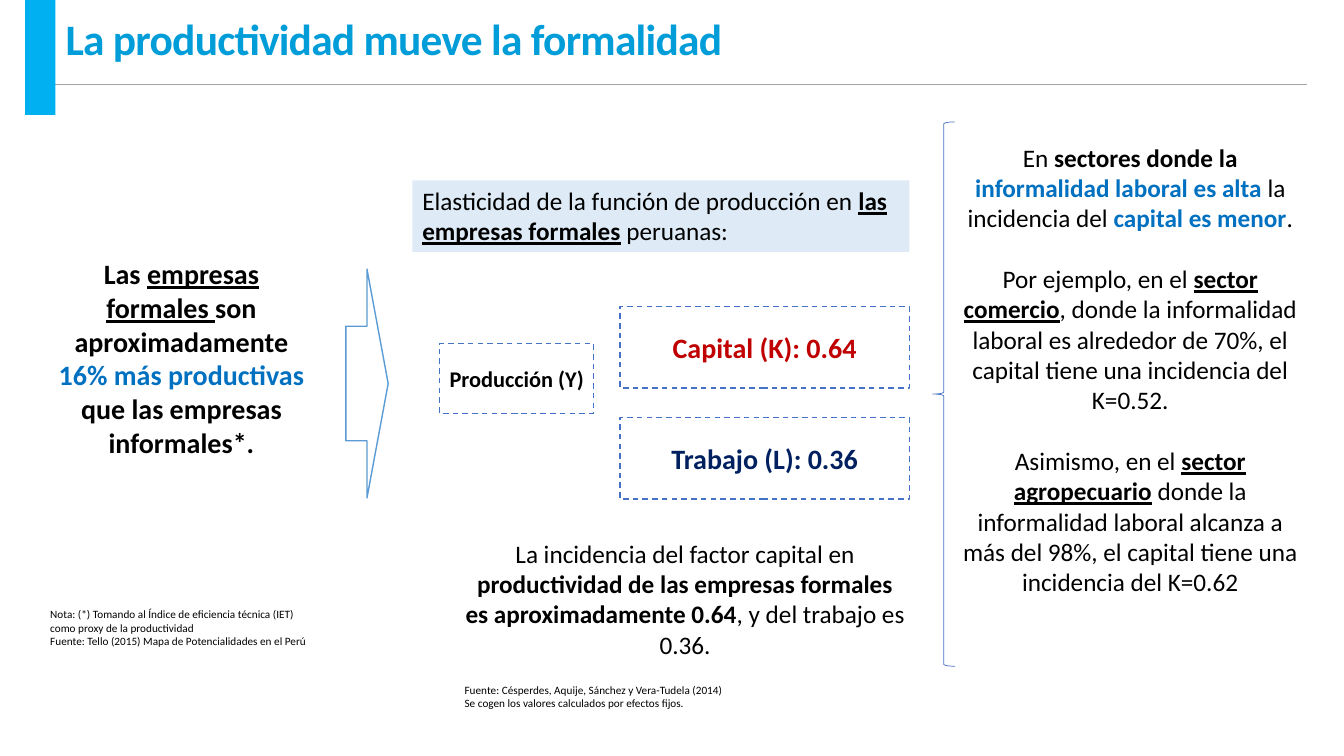
from dataclasses import dataclass

from lxml import etree
from pptx import Presentation
from pptx.dml.color import RGBColor
from pptx.enum.dml import MSO_LINE
from pptx.enum.shapes import MSO_CONNECTOR as Connector, MSO_SHAPE as Preset
from pptx.enum.text import MSO_ANCHOR as Anchor, MSO_AUTO_SIZE, PP_ALIGN as Align
from pptx.oxml.ns import qn
from pptx.util import Emu, Pt

EMU_PER_PX = 9144  # 100 px to the inch
FONT = "Calibri"
BLACK = RGBColor(0x00, 0x00, 0x00)
WHITE = RGBColor(0xFF, 0xFF, 0xFF)
TITLE_BLUE = RGBColor(0x00, 0x9D, 0xD9)
ACCENT_BLUE = RGBColor(0x00, 0xB0, 0xF0)
KEY_BLUE = RGBColor(0x00, 0x70, 0xC0)
NAVY = RGBColor(0x00, 0x20, 0x60)
RED = RGBColor(0xC0, 0x00, 0x00)
PALE_BLUE = RGBColor(0xDE, 0xEB, 0xF7)
BORDER_BLUE = RGBColor(0x44, 0x72, 0xC4)
ARROW_BLUE = RGBColor(0x5B, 0x9B, 0xD5)
RULE_GRAY = RGBColor(0xA5, 0xA5, 0xA5)


@dataclass(frozen=True)
class Box:
    left: int
    top: int
    width: int
    height: int

    def emu(self) -> tuple[Emu, ...]:
        return tuple(px(n) for n in (self.left, self.top, self.width, self.height))


@dataclass(frozen=True)
class Span:
    text: str
    bold: bool = False
    underline: bool = False
    color: RGBColor = BLACK


@dataclass(frozen=True)
class Passage:
    box: Box
    size: int
    paragraphs: tuple[tuple[Span, ...], ...]
    align: Align = Align.CENTER
    gap: int = 0  # points between paragraphs


@dataclass(frozen=True)
class Factor:
    """A dashed box that holds one term of the production function."""
    box: Box
    size: int
    label: str
    color: RGBColor


PASSAGES = (
    Passage(Box(40, 250, 280, 212), 20, ((
        Span("Las ", True),
        Span("empresas formales ", True, True),
        Span("son aproximadamente ", True),
        Span("16% más productivas ", True, color=KEY_BLUE),
        Span("que las empresas informales*.", True),
    ),)),
    Passage(Box(451, 529, 457, 131), 18, ((
        Span("La incidencia del factor capital en "),
        Span("productividad de las empresas formales es aproximadamente 0.64", True),
        Span(", y del trabajo es 0.36."),
    ),)),
    Passage(Box(945, 136, 352, 495), 18, (
        (
            Span("En "),
            Span("sectores donde la ", True),
            Span("informalidad laboral es alta ", True, color=KEY_BLUE),
            Span("la incidencia del "),
            Span("capital es menor", True, color=KEY_BLUE),
            Span("."),
        ),
        (
            Span("Por ejemplo, en el "),
            Span("sector comercio", True, True),
            Span(", donde la informalidad laboral es alrededor de 70%, "
                 "el capital tiene una incidencia del K=0.52."),
        ),
        (
            Span("Asimismo, en el "),
            Span("sector agropecuario", True, True),
            Span(" donde la informalidad laboral alcanza a más del 98%, "
                 "el capital tiene una incidencia del K=0.62"),
        ),
    ), gap=22),
    Passage(Box(40, 598, 280, 50), 8, (
        (Span("Nota: (*) Tomando al Índice de eficiencia técnica (IET) "
              "como proxy de la productividad"),),
        (Span("Fuente: Tello (2015) Mapa de Potencialidades en el Perú"),),
    ), Align.LEFT),
    Passage(Box(451, 673, 307, 37), 8, (
        (Span("Fuente: Césperdes, Aquije, Sánchez y Vera-Tudela (2014)"),),
        (Span("Se cogen los valores calculados por efectos fijos."),),
    ), Align.LEFT),
)

ELASTICITY = Passage(Box(409, 179, 493, 71), 18, ((
    Span("Elasticidad de la función de producción en "),
    Span("las empresas formales", True, True),
    Span(" peruanas:"),
),), Align.LEFT)

FACTORS = (
    Factor(Box(615, 304, 287, 81), 20, "Capital (K): 0.64", RED),
    Factor(Box(615, 414, 287, 81), 20, "Trabajo (L): 0.36", NAVY),
    Factor(Box(436, 341, 153, 69), 16, "Producción (Y)", BLACK),
)


def px(length: int) -> Emu:
    return Emu(length * EMU_PER_PX)


def add_span(paragraph, span: Span, size: int):
    run = paragraph.add_run()
    run.text = span.text
    font = run.font
    font.name, font.size = FONT, Pt(size)
    font.bold, font.underline = span.bold, span.underline
    font.color.rgb = span.color
    return run


def write(frame, passage: Passage) -> None:
    frame.word_wrap = True
    frame.vertical_anchor = Anchor.TOP
    for index, spans in enumerate(passage.paragraphs):
        paragraph = frame.add_paragraph() if index else frame.paragraphs[0]
        paragraph.alignment = passage.align
        if index:
            paragraph.space_before = Pt(passage.gap)
        for span in spans:
            add_span(paragraph, span, passage.size)


def add_preset(slide, preset: Preset, box: Box, fill: RGBColor | None = None,
               line: RGBColor | None = None, weight: float = 1):
    shape = slide.shapes.add_shape(preset, *box.emu())
    shape.shadow.inherit = False
    if fill is None:
        shape.fill.background()
    else:
        shape.fill.solid()
        shape.fill.fore_color.rgb = fill
    if line is None:
        shape.line.fill.background()
    else:
        shape.line.color.rgb = line
        shape.line.width = Pt(weight)
    return shape


def add_factor(slide, factor: Factor) -> None:
    shape = add_preset(slide, Preset.RECTANGLE, factor.box, WHITE, BORDER_BLUE)
    shape.line.dash_style = MSO_LINE.DASH
    frame = shape.text_frame
    label = Span(factor.label, True, color=factor.color)
    write(frame, Passage(factor.box, factor.size, ((label,),)))
    frame.vertical_anchor = Anchor.MIDDLE
    frame.margin_left = frame.margin_right = px(4)
    frame.margin_top = frame.margin_bottom = 0


def set_title(slide) -> None:
    title = slide.shapes.title
    title.left, title.top, title.width, title.height = Box(55, 0, 1178, 84).emu()
    frame = title.text_frame
    frame.auto_size = MSO_AUTO_SIZE.NONE
    frame.vertical_anchor = Anchor.MIDDLE
    heading = frame.paragraphs[0]
    heading.alignment = Align.LEFT
    heading.line_spacing = 0.85
    span = Span("La productividad mueve la formalidad", True, color=TITLE_BLUE)
    run = add_span(heading, span, 31)
    run.font._element.set("spc", "-50")


def add_title_rule(slide) -> None:
    rule = slide.shapes.add_connector(
        Connector.STRAIGHT, px(32), px(84), px(1296), px(84))
    rule.line.color.rgb = RULE_GRAY
    rule.line.width = Pt(0.5)
    etree.SubElement(rule._element.spPr, qn("a:effectLst"))


def main() -> None:
    deck = Presentation()
    deck.slide_width, deck.slide_height = px(1333), px(750)
    slide = deck.slides.add_slide(deck.slide_layouts.get_by_name("Title Only"))
    set_title(slide)
    banner = add_preset(slide, Preset.RECTANGLE, ELASTICITY.box, PALE_BLUE)
    write(banner.text_frame, ELASTICITY)
    for factor in FACTORS:
        add_factor(slide, factor)
    for passage in PASSAGES:
        write(slide.shapes.add_textbox(*passage.box.emu()).text_frame, passage)
    add_preset(slide, Preset.RIGHT_ARROW, Box(343, 267, 42, 227), WHITE, ARROW_BLUE)
    add_preset(slide, Preset.LEFT_BRACE, Box(925, 121, 22, 540),
               line=BORDER_BLUE, weight=0.5)
    add_title_rule(slide)
    add_preset(slide, Preset.RECTANGLE, Box(25, 0, 30, 114), ACCENT_BLUE)
    deck.save("out.pptx")


if __name__ == "__main__":
    main()
